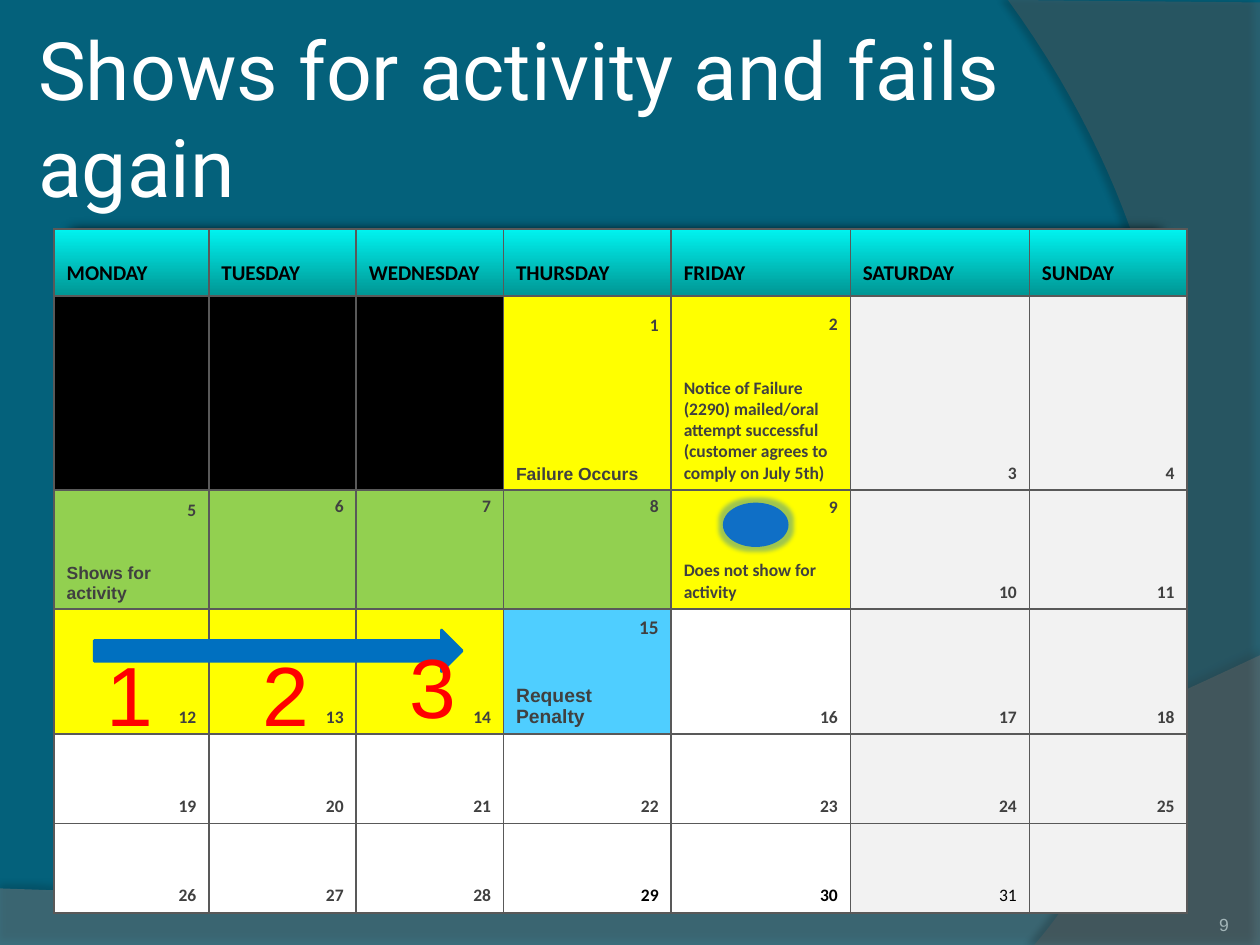
"""Build a July calendar slide that tracks a second failed activity."""
from lxml.etree import SubElement
from pptx import Presentation
from pptx.dml.color import RGBColor
from pptx.enum.shapes import MSO_SHAPE
from pptx.enum.text import MSO_ANCHOR, MSO_AUTO_SIZE, PP_ALIGN
from pptx.oxml.ns import qn
from pptx.util import Cm, Pt

HUES = {
    "back": "04617B", "wave": "7F7F7F", "curve": "5E5E5E", "black": "000000",
    "white": "FFFFFF", "aqua": "00F3F0", "teal": "009593", "yellow": "FFFF00",
    "green": "92D050", "sky": "4FCEFF", "pale": "F2F2F2", "ink": "404040",
    "grid": "595959", "blue": "0070C0", "spot": "0F6FC6", "red": "FF0000",
    "page": "A2B5B8",
}
TITLE = "Shows for activity and fails again"
DAYS = ["MONDAY", "TUESDAY", "WEDNESDAY", "THURSDAY", "FRIDAY", "SATURDAY", "SUNDAY"]
COLS = [3.12, 2.97, 2.97, 3.38, 3.61, 3.61, 3.18]
ROWS = [1.35, 3.91, 2.4, 2.52, 1.8, 1.8]
FIRST, LAST = 3, 31
FILLS = {
    "black": [-2, -1, 0],
    "yellow": [1, 2, 9, 12, 13, 14],
    "green": [5, 6, 7, 8],
    "sky": [15],
}
NOTES = {
    1: (["Failure Occurs"], "Arial", 10, 73),
    2: (["Notice of Failure (2290) mailed/oral attempt successful "
         "(customer agrees to comply on July 5th)"], "Calibri", 10, 24.4),
    5: (["Shows for", "activity"], "Arial", 10, 24.4),
    9: (["Does not show for activity"], "Calibri", 10, 24.4),
    15: (["Request Penalty"], "Arial", 11, 25.6),
}
HIGH = [6, 7, 8]
COUNTS = [("1", 1.9, 12.83, 1.07), ("2", 5.05, 12.83, 0.84), ("3", 8, 12.67, 1.27)]
WAVES = [
    ("wave", 45, (35, 4, 3.5, 270), [(0, 17.91), (0, 19.05), (25.4, 19.05)],
     [(25.4, 13.21), (14.2, 18.52), (9.93, 18.26), (0, 17.91)]),
    ("curve", 40, (45, 4, 4, 180), [(20.32, 0), (25.4, 0.05), (25.4, 19.05)],
     [(20.85, 19.05), (23.75, 15.72), (25.86, 7.62), (20.32, 0)]),
]


def hue(name):
    return RGBColor.from_string(HUES[name])


def area(*nums):
    return [Cm(num) for num in nums]


def paint(part, name):
    part.fill.solid()
    part.fill.fore_color.rgb = hue(name)


def write(frame, text, font="Calibri", size=10, color="ink", bold=False,
          align=PP_ALIGN.LEFT, after=0):
    para = frame.paragraphs[0]
    if para.runs:
        para = frame.add_paragraph()
    para.alignment, para.space_after = align, Pt(after)
    run = para.add_run()
    run.text = text
    run.font.name, run.font.size, run.font.bold = font, Pt(size), bold
    run.font.color.rgb = hue(color)


def tint(node, name, alpha):
    color = SubElement(node, qn("a:srgbClr"), val=HUES[name])
    SubElement(color, qn("a:alpha"), val=str(alpha * 1000))


def effect(shape, tag, **attrs):
    shape.shadow.inherit = False
    holder = shape.element.spPr.find(qn("a:effectLst"))
    return SubElement(holder, qn(tag), {key: str(int(val)) for key, val in attrs.items()})


def bend(ends, steps=60):
    a, b, c, d = ends
    for step in range(steps + 1):
        t = step / steps
        u = 1 - t
        yield tuple(u**3 * a[i] + 3 * u * u * t * b[i] + 3 * u * t * t * c[i] + t**3 * d[i]
                    for i in (0, 1))


def draw_wave(shapes, name, alpha, shade, edge, ends):
    spots = [area(*spot) for spot in edge + list(bend(ends))]
    pen = shapes.build_freeform(*spots[0])
    pen.add_line_segments(spots[1:], close=True)
    shape = pen.convert_to_shape()
    paint(shape, name)
    SubElement(shape.element.spPr.find(qn("a:solidFill"))[0], qn("a:alpha"),
               val=str(alpha * 1000))
    shape.line.fill.background()
    dark, blur, dist, turn = shade
    node = effect(shape, "a:outerShdw", blurRad=Pt(blur), dist=Pt(dist), dir=turn * 60000)
    tint(node, "black", dark)


def add_shape(shapes, kind, box, name, line=True):
    shape = shapes.add_shape(kind, *area(*box))
    paint(shape, name)
    shape.shadow.inherit = False
    if line:
        shape.line.color.rgb, shape.line.width = hue(name), Pt(1.5)
    else:
        shape.line.fill.background()
    return shape


def add_text(shapes, box, text, **look):
    frame = shapes.add_textbox(*area(*box)).text_frame
    frame.word_wrap = True
    write(frame, text, **look)
    return frame


def rule(cell):
    props = cell._tc.get_or_add_tcPr()
    for side in ("a:lnL", "a:lnR", "a:lnT", "a:lnB"):
        line = SubElement(props, qn(side), w=str(Pt(1)))
        SubElement(SubElement(line, qn("a:solidFill")), qn("a:srgbClr"), val=HUES["grid"])


def fill_head(cell, day):
    cell.fill.gradient()
    cell.fill.gradient_angle = 270
    for stop, name in zip(cell.fill.gradient_stops, ("aqua", "teal")):
        stop.color.rgb = hue(name)
    cell.margin_bottom = Cm(0.2)
    write(cell.text_frame, day, size=12, color="black", bold=True)


def fill_day(cell, date, col):
    plain = "pale" if col > 4 else "white"
    paint(cell, next((name for name, dates in FILLS.items() if date in dates), plain))
    if not 1 <= date <= LAST:
        return
    if date in HIGH:
        cell.vertical_anchor = MSO_ANCHOR.TOP
    lines, font, size, gap = NOTES.get(date, ([], "Calibri", 10, 0))
    write(cell.text_frame, str(date), size=size, color="black" if date > 28 else "ink",
          bold=date < LAST, align=PP_ALIGN.RIGHT, after=gap)
    for line in lines:
        write(cell.text_frame, line, font=font, size=size, bold=True)


def add_month(shapes):
    table = shapes.add_table(len(ROWS), len(COLS),
                             *area(1.09, 4.62, sum(COLS), sum(ROWS))).table
    table.first_row = table.horz_banding = False
    for col, width in enumerate(COLS):
        table.columns[col].width = Cm(width)
    for row, height in enumerate(ROWS):
        table.rows[row].height = Cm(height)
        for col, day in enumerate(DAYS):
            cell = table.cell(row, col)
            rule(cell)
            cell.vertical_anchor = MSO_ANCHOR.BOTTOM
            if row:
                fill_day(cell, (row - 1) * len(DAYS) + col + 1 - FIRST, col)
            else:
                fill_head(cell, day)


def set_title(title):
    title.left, title.top, title.width, title.height = area(0.64, 0.76, 23.5, 3.18)
    frame = title.text_frame
    frame.word_wrap, frame.auto_size = True, MSO_AUTO_SIZE.NONE
    frame.vertical_anchor = MSO_ANCHOR.MIDDLE
    frame.margin_left = frame.margin_right = frame.margin_top = frame.margin_bottom = Cm(0.13)
    write(frame, TITLE, font="Roboto", size=46, color="white")
    title.element.getparent().append(title.element)


def main():
    deck = Presentation()
    deck.slide_width, deck.slide_height = area(25.4, 19.05)
    slide = deck.slides.add_slide(deck.slide_layouts[5])
    shapes = slide.shapes
    paint(slide.background, "back")
    for wave in WAVES:
        draw_wave(shapes, *wave)
    panel = add_shape(shapes, MSO_SHAPE.RECTANGLE, (1.04, 4.29, 22.78, 11.81), "black", line=False)
    effect(panel, "a:softEdge", rad=Pt(9))
    add_month(shapes)
    set_title(shapes.title)
    page = add_text(shapes, (22.66, 17.83, 2.11, 1.02), "9", font="Arial", color="page",
                    align=PP_ALIGN.RIGHT)
    page.vertical_anchor = MSO_ANCHOR.BOTTOM
    page.margin_left = page.margin_right = page.margin_top = page.margin_bottom = 0
    add_shape(shapes, MSO_SHAPE.RIGHT_ARROW, (1.9, 12.7, 7.42, 0.84), "blue")
    spot = add_shape(shapes, MSO_SHAPE.FLOWCHART_SUMMING_JUNCTION, (14.6, 10.16, 1.27, 0.84), "spot")
    tint(effect(spot, "a:glow", rad=Pt(5)), "spot", 40)
    for text, left, top, width in COUNTS:
        add_text(shapes, (left, top, width, 2.31), text, font="Arial", size=48, color="red")
    deck.save("out.pptx")


if __name__ == "__main__":
    main()
